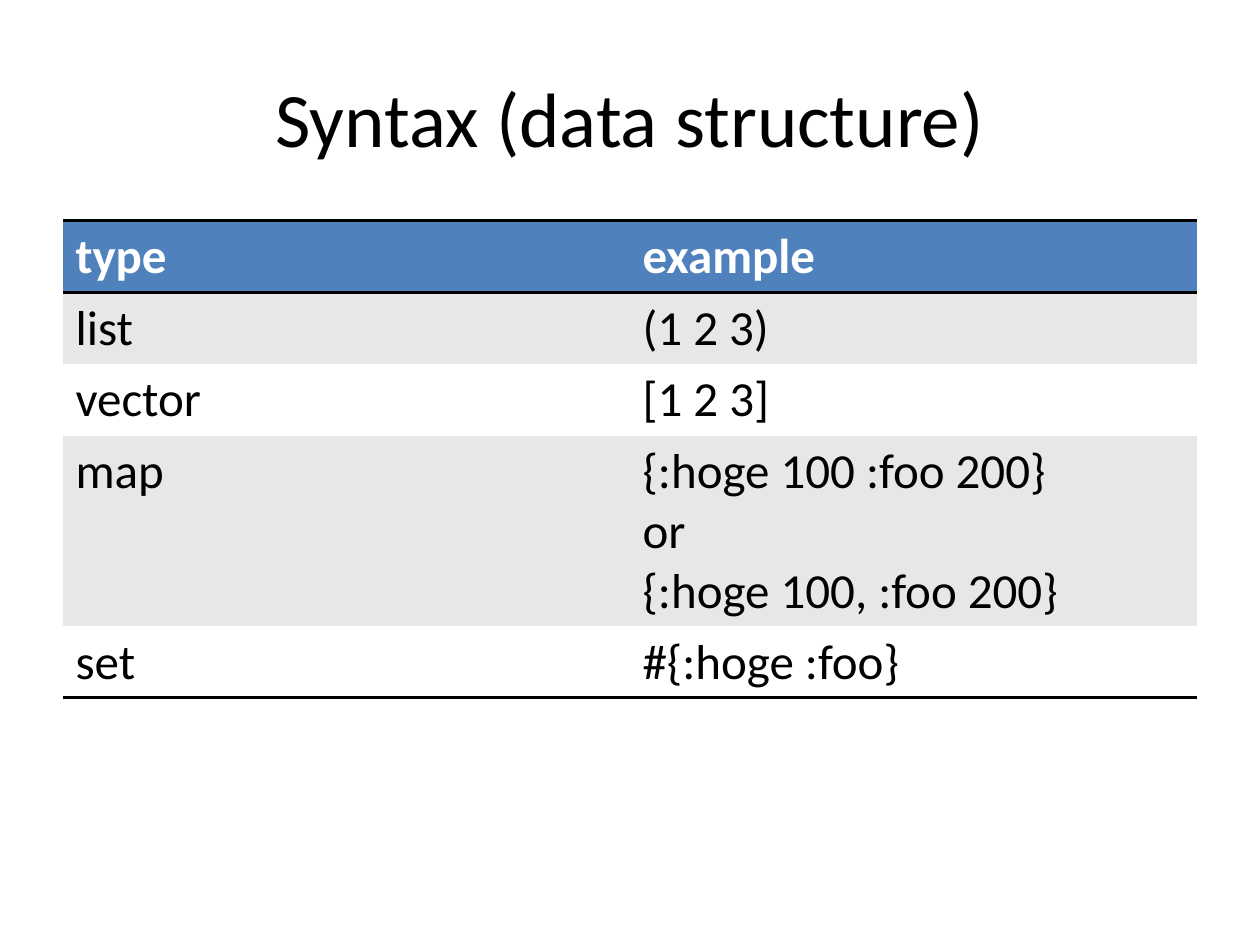
from dataclasses import dataclass

from lxml import etree
from pptx import Presentation
from pptx import util as u
from pptx.dml.color import RGBColor
from pptx.enum import text
from pptx.oxml.ns import qn


@dataclass(frozen=True)
class Theme:
    font: str = "Calibri"
    ink: str = "000000"
    paper: str = "FFFFFF"
    accent: str = "4F81BD"
    band: str = "E7E7E7"
    title_size: int = 44
    table_size: int = 28
    rule_width: int = 2


def write(frame, content, *, font, size, color, bold=False, align=text.PP_ALIGN.LEFT):
    """Fill a text frame, one paragraph per line of content."""
    for index, line in enumerate(content.split("\n")):
        paragraph = frame.paragraphs[0] if index == 0 else frame.add_paragraph()
        paragraph.alignment = align
        run = paragraph.add_run()
        run.text = line
        run.font.name = font
        run.font.size = u.Pt(size)
        run.font.bold = bold
        run.font.color.rgb = RGBColor.from_string(color)


def set_borders(cell, ruled_sides, color, width):
    """Rule the named sides (T, B) of a cell and clear the others."""
    properties = cell._tc.get_or_add_tcPr()
    for side in "LRTB":
        line = etree.SubElement(properties, qn(f"a:ln{side}"))
        if side in ruled_sides:
            line.set("w", str(u.Pt(width)))
            fill = etree.SubElement(line, qn("a:solidFill"))
            etree.SubElement(fill, qn("a:srgbClr")).set("val", color)
        else:
            line.set("w", "0")
            etree.SubElement(line, qn("a:noFill"))


class SlideBuilder:
    """Places elements by shares of the slide's width and height."""

    def __init__(self, deck, theme):
        self.deck = deck
        self.theme = theme
        self.slide = deck.slides.add_slide(deck.slide_layouts[6])

    def box(self, left, top, width, height):
        across, down = self.deck.slide_width, self.deck.slide_height
        return (int(left * across), int(top * down),
                int(width * across), int(height * down))

    def title(self, content, area):
        frame = self.slide.shapes.add_textbox(*self.box(*area)).text_frame
        frame.word_wrap = True
        frame.vertical_anchor = text.MSO_ANCHOR.MIDDLE
        write(frame, content, font=self.theme.font, size=self.theme.title_size,
              color=self.theme.ink, align=text.PP_ALIGN.CENTER)

    def table(self, rows, area, line_height, padding):
        """Draw a banded table whose rows grow with their number of lines."""
        theme = self.theme
        grid = self.slide.shapes.add_table(
            len(rows), len(rows[0]), *self.box(*area)).table
        last = len(rows) - 1
        for r, row in enumerate(rows):
            lines = max(entry.count("\n") + 1 for entry in row)
            grid.rows[r].height = u.Inches(lines * line_height + padding)
            header = r == 0
            ruled = {0: "TB", 1: "T", last: "B"}.get(r, "")
            fill = theme.accent if header else theme.band if r % 2 else theme.paper
            for c, entry in enumerate(row):
                cell = grid.cell(r, c)
                set_borders(cell, ruled, theme.ink, theme.rule_width)
                cell.fill.solid()
                cell.fill.fore_color.rgb = RGBColor.from_string(fill)
                write(cell.text_frame, entry, font=theme.font,
                      size=theme.table_size, bold=header,
                      color=theme.paper if header else theme.ink)


def main():
    deck = Presentation()
    deck.slide_width, deck.slide_height = u.Inches(10), u.Inches(7.5)
    builder = SlideBuilder(deck, Theme())
    margin, content_width = 0.05, 0.9
    builder.title("Syntax (data structure)", (margin, 0.04, content_width, 1 / 6))
    structures = [
        ("type", "example"),
        ("list", "(1 2 3)"),
        ("vector", "[1 2 3]"),
        ("map", "{:hoge 100 :foo 200}\nor\n{:hoge 100, :foo 200}"),
        ("set", "#{:hoge :foo}"),
    ]
    builder.table(structures, (margin, 7 / 30, content_width, 0.5),
                  line_height=0.47, padding=0.1)
    deck.save("out.pptx")


if __name__ == "__main__":
    main()
